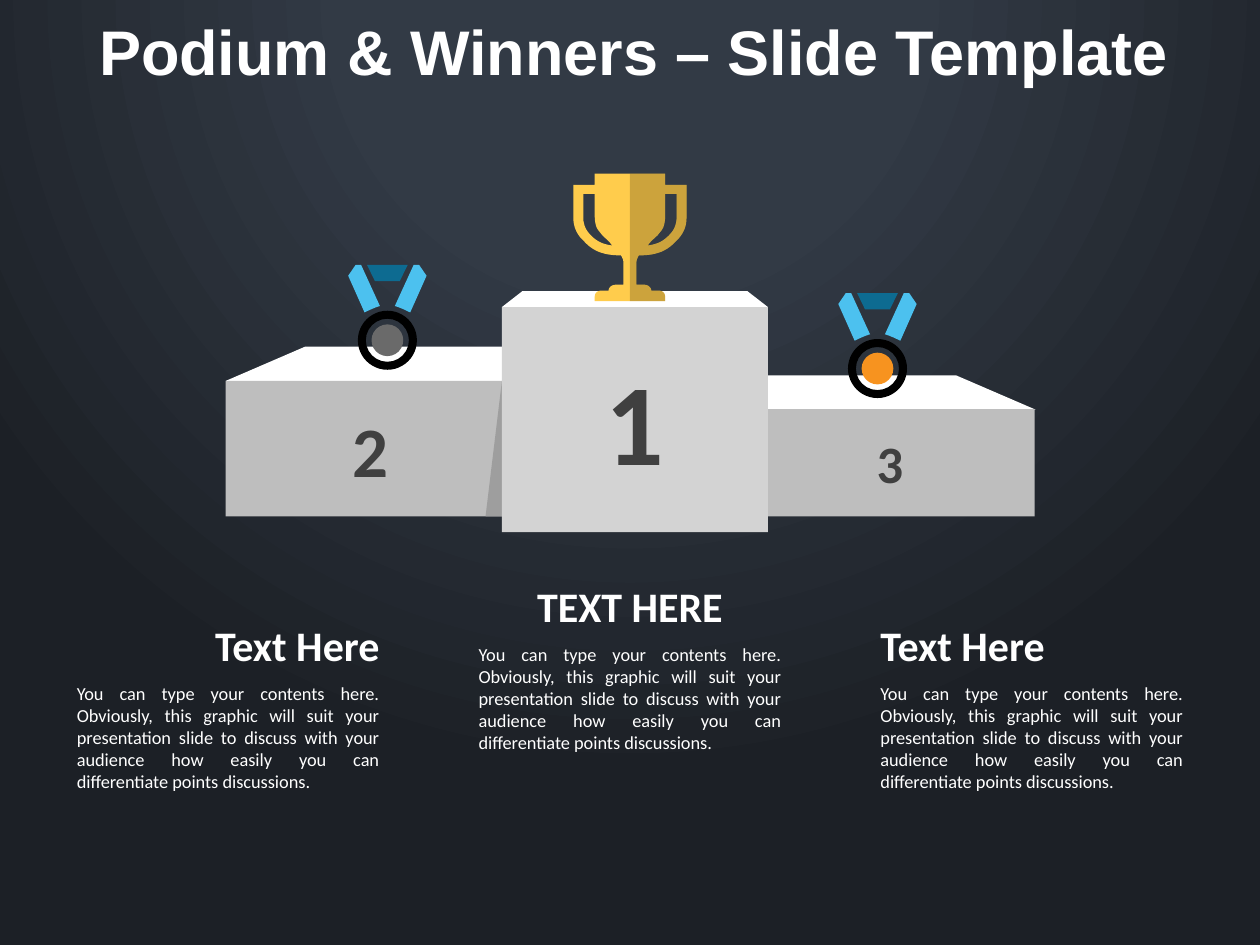
from typing import NamedTuple

from lxml import etree
from pptx import Presentation
from pptx.dml.color import RGBColor
from pptx.enum.shapes import MSO_SHAPE as Preset
from pptx.enum.text import MSO_ANCHOR as Anchor, PP_ALIGN as Align
from pptx.oxml import parse_xml
from pptx.oxml.ns import nsdecls, qn
from pptx.util import Cm, Pt

WHITE = RGBColor(0xFF, 0xFF, 0xFF)
BLACK = RGBColor(0x00, 0x00, 0x00)
NUMBER = RGBColor(0x40, 0x40, 0x40)
SIDE_STEP = RGBColor(0xBE, 0xBE, 0xBE)
FRONT_STEP = RGBColor(0xD3, 0xD3, 0xD3)
STEP_SHADE = RGBColor(0x9E, 0x9E, 0x9E)
SILVER = RGBColor(0x6A, 0x6A, 0x6A)
BRONZE = RGBColor(0xF7, 0x93, 0x1F)
GOLD = RGBColor(0xFF, 0xCC, 0x4C)
RIBBON = RGBColor(0x4C, 0xC1, 0xEF)
KNOT = RGBColor(0x0D, 0x6B, 0x91)

BODY_TEXT = ("You can type your contents here. Obviously, this graphic will suit your "
             "presentation slide to discuss with your audience how easily you can "
             "differentiate points discussions.")

# Outlines in cm: two numbers are a line to a point, six are a Bézier curve.
RIBBON_STRAP = [(0.15, -0.69), (0.25, -0.66, 0.36, -0.61, 0.46, -0.56),
                (0.79, -1.3), (0.64, -1.52), (0.53, -1.52)]
RIBBON_KNOT = [(0.25, -1.19), (0.41, -1.52), (-0.41, -1.52), (-0.25, -1.19)]
CUP_HALF = [(0, 0), (0.71, 0), (0.71, 0.23), (1.14, 0.23), (1.14, 0.91),
            (1.14, 0.94, 1.14, 1.17, 0.94, 1.35), (0.76, 1.55, 0.56, 1.65, 0.18, 1.65),
            (0.15, 1.7, 0.13, 1.75, 0.13, 1.8), (0.13, 2.24), (0.28, 2.24),
            (0.36, 2.24, 0.43, 2.29, 0.43, 2.36), (0.58, 2.36),
            (0.66, 2.36, 0.71, 2.41, 0.71, 2.49), (0.71, 2.57), (0, 2.57)]
CUP_HANDLE = [(0.71, 0.41), (0.71, 0.84), (0.71, 0.97, 0.69, 1.07, 0.64, 1.14),
              (0.56, 1.24), (0.48, 1.32, 0.41, 1.37, 0.36, 1.45),
              (0.58, 1.42, 0.69, 1.35, 0.81, 1.22),
              (0.94, 1.09, 0.94, 0.91, 0.94, 0.91), (0.94, 0.41)]

Points = list[tuple[float, float]]


class Step(NamedTuple):
    number: str
    size: float
    left: float
    top: float
    width: float
    height: float
    color: RGBColor


class Medal(NamedTuple):
    x: float
    y: float
    color: RGBColor


class Caption(NamedTuple):
    heading: str
    left: float
    top: float
    align: Align


SECOND = Step("2", 40.5, 4.55, 7.68, 5.84, 2.73, SIDE_STEP)
THIRD = Step("3", 30, 15.02, 8.25, 5.84, 2.16, SIDE_STEP)
FIRST = Step("1", 66, 10.12, 6.19, 5.36, 4.54, FRONT_STEP)
MEDALS = [Medal(7.81, 6.86, SILVER), Medal(17.69, 7.43, BRONZE)]
CAPTIONS = [Caption("Text Here", 17.75, 12.34, Align.LEFT),
            Caption("Text Here", 1.55, 12.34, Align.RIGHT),
            Caption("TEXT HERE", 9.65, 11.56, Align.CENTER)]


def flatten(outline: list[tuple], pieces: int = 12) -> Points:
    """Turn lines and Bézier curves into a list of points."""
    points: Points = []
    for part in outline:
        if len(part) == 2:
            points.append(part)
            continue
        x0, y0 = points[-1]
        x1, y1, x2, y2, x3, y3 = part
        for piece in range(1, pieces + 1):
            t = piece / pieces
            a, b, c, d = (1 - t) ** 3, 3 * t * (1 - t) ** 2, 3 * t * t * (1 - t), t ** 3
            points.append((a * x0 + b * x1 + c * x2 + d * x3,
                           a * y0 + b * y1 + c * y2 + d * y3))
    return points


def mirror(points: Points) -> Points:
    return [(-x, y) for x, y in reversed(points)]


def paint(shape, color: RGBColor) -> None:
    shape.shadow.inherit = False
    shape.fill.solid()
    shape.fill.fore_color.rgb = color
    shape.line.fill.background()


def add_preset(page, preset, left, top, width, height, color, adjust=None):
    shape = page.shapes.add_shape(preset, Cm(left), Cm(top), Cm(width), Cm(height))
    if adjust is not None:
        shape.adjustments[0] = adjust
    paint(shape, color)
    return shape


def add_outline(page, x: float, y: float, color: RGBColor, *contours: Points):
    """Draw contours placed around (x, y); inner ones become holes."""
    moved = [[(Cm(x + dx), Cm(y + dy)) for dx, dy in contour] for contour in contours]
    builder = page.shapes.build_freeform(*moved[0][0])
    for index, contour in enumerate(moved):
        if index:
            builder.move_to(*contour[0])
        builder.add_line_segments(contour[1:], close=True)
    shape = builder.convert_to_shape()
    paint(shape, color)
    return shape


def write(frame, text: str, *, size: float, color=WHITE, font="Calibri", bold=False,
          align=Align.LEFT, anchor=Anchor.TOP, spacing=None) -> None:
    frame.word_wrap = True
    frame.vertical_anchor = anchor
    para = frame.paragraphs[0]
    para.alignment = align
    para.line_spacing = spacing
    span = para.add_run()
    span.text = text
    span.font.name, span.font.size, span.font.bold = font, Pt(size), bold
    span.font.color.rgb = color


def add_text(page, text: str, left, top, width, height, *, inset=0.0, **style) -> None:
    box = page.shapes.add_textbox(Cm(left), Cm(top), Cm(width), Cm(height))
    box.text_frame.margin_left, box.text_frame.margin_right = Cm(inset), Cm(0)
    write(box.text_frame, text, **style)


def add_step(page, step: Step) -> None:
    front = add_preset(page, Preset.RECTANGLE, step.left, step.top, step.width,
                       step.height, step.color)
    write(front.text_frame, step.number, size=step.size, color=NUMBER, bold=True,
          align=Align.CENTER, anchor=Anchor.MIDDLE)


def add_podium(page) -> None:
    for left, top in ((4.55, 6.99), (12.98, 7.57)):
        add_preset(page, Preset.TRAPEZOID, left, top, 7.9, 0.69, WHITE, 2.318)
    add_step(page, SECOND)
    add_step(page, THIRD)
    add_preset(page, Preset.TRAPEZOID, FIRST.left, 5.87, FIRST.width, 0.32, WHITE, 1.287)
    shade = add_preset(page, Preset.RIGHT_TRIANGLE, 9.79, SECOND.top, 0.33,
                       SECOND.height, STEP_SHADE)
    shade._element.spPr.xfrm.set("flipH", "1")
    add_step(page, FIRST)


def add_medal(page, medal: Medal) -> None:
    for preset, size, color, adjust in ((Preset.OVAL, 0.64, medal.color, None),
                                        (Preset.DONUT, 1.19, BLACK, 0.135)):
        add_preset(page, preset, medal.x - size / 2, medal.y - size / 2, size, size,
                   color, adjust)
    strap = flatten(RIBBON_STRAP)
    for points, color in ((strap, RIBBON), (mirror(strap), RIBBON), (RIBBON_KNOT, KNOT)):
        add_outline(page, medal.x, medal.y, color, points)


def add_trophy(page, x: float, y: float) -> None:
    half, handle = flatten(CUP_HALF), flatten(CUP_HANDLE)
    add_outline(page, x, y, GOLD, half + mirror(half), handle, mirror(handle))
    shade = add_outline(page, x, y, BLACK, half, handle)
    color = shade._element.spPr.find(qn("a:solidFill"))[0]
    etree.SubElement(color, qn("a:alpha")).set("val", "20000")


def set_background(page) -> None:
    """Fill the page with a round gradient centred above its top edge."""
    stops = "".join(f'<a:gs pos="{at}000"><a:srgbClr val="{color}"/></a:gs>'
                    for at, color in ((0, "323A45"), (35, "323A45"), (100, "1C2026")))
    page._element.cSld.insert(0, parse_xml(
        f'<p:bg {nsdecls("p", "a")}><p:bgPr><a:gradFill><a:gsLst>{stops}</a:gsLst>'
        '<a:path path="circle"><a:fillToRect l="50000" t="-80000" r="50000" b="180000"/>'
        '</a:path></a:gradFill><a:effectLst/></p:bgPr></p:bg>'))


def main() -> None:
    deck = Presentation()
    deck.slide_width, deck.slide_height = Cm(25.4), Cm(19.05)
    page = deck.slides.add_slide(deck.slide_layouts[6])
    set_background(page)
    add_text(page, "Podium & Winners – Slide Template", 1.75, 0.3, 23.65, 2.06,
             inset=0.25, size=36, font="Arial", bold=True, spacing=0.9)
    add_podium(page)
    for medal in MEDALS:
        add_medal(page, medal)
    add_trophy(page, 12.7, 3.5)
    for caption in CAPTIONS:
        add_text(page, caption.heading, caption.left, caption.top, 6.1, 1.28, size=24,
                 bold=True, align=caption.align, anchor=Anchor.BOTTOM)
        add_text(page, BODY_TEXT, caption.left, caption.top + 1.28, 6.1, 2.49,
                 size=10.5, align=Align.JUSTIFY)
    deck.save("out.pptx")


if __name__ == "__main__":
    main()
